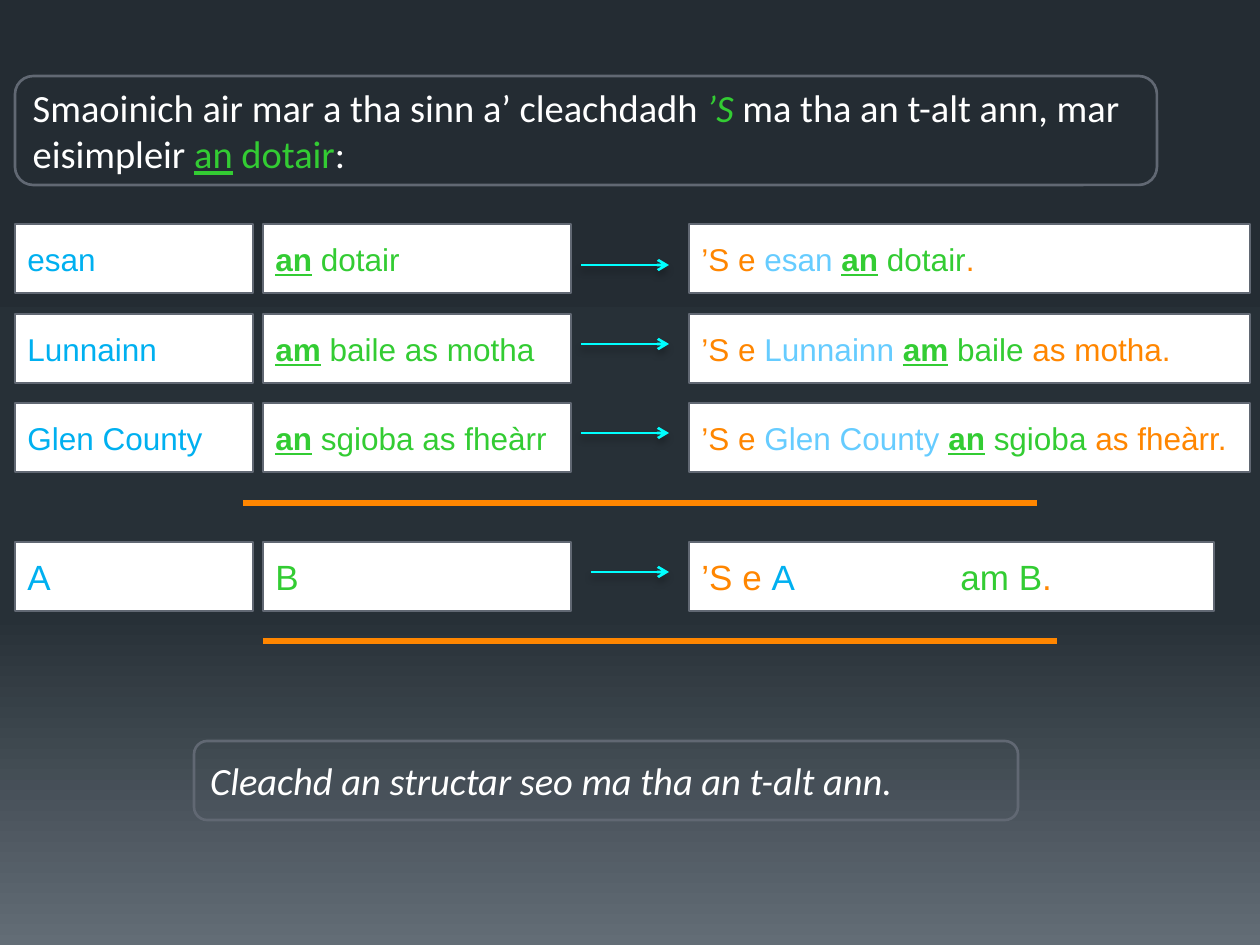
from copy import deepcopy
from dataclasses import dataclass
from typing import NamedTuple

from pptx import Presentation
from pptx.dml.color import RGBColor
from pptx.enum.shapes import MSO_CONNECTOR, MSO_SHAPE
from pptx.enum.text import MSO_ANCHOR, PP_ALIGN
from pptx.oxml import parse_xml
from pptx.oxml.ns import nsdecls, qn
from pptx.util import Emu, Pt

SCALE = 914400 / 126
WHITE = RGBColor(0xFF, 0xFF, 0xFF)
BORDER = RGBColor(0x61, 0x68, 0x73)
GREEN = RGBColor(0x33, 0xCC, 0x33)
ORANGE = RGBColor(0xFF, 0x86, 0x00)
BLUE = RGBColor(0x00, 0xB0, 0xF0)
SKY = RGBColor(0x66, 0xCC, 0xFF)
CYAN = RGBColor(0x00, 0xFF, 0xFF)
BACKDROP = [
    (0, RGBColor(0x24, 0x2C, 0x33)),
    (0.65, RGBColor(0x27, 0x30, 0x37)),
    (1, RGBColor(0x63, 0x6D, 0x76)),
]
CELL_H = 69


class Run(NamedTuple):
    text: str
    color: RGBColor
    bold: bool = False
    under: bool = False
    italic: bool = False


class Box(NamedTuple):
    left: int
    top: int
    width: int
    height: int


@dataclass
class Row:
    """One pattern: subject and noun, then the sentence they make."""
    top: int
    subject: list[Run]
    noun: list[Run]
    result: list[Run]
    arrow_y: int
    arrow_x: int = 581
    result_w: int = 561
    size: int = 18


def px(n: int) -> Emu:
    return Emu(round(n * SCALE))


def article(word: str) -> Run:
    return Run(word, GREEN, bold=True, under=True)


def write(shape, runs: list[Run], *, font: str = "Arial", size: int = 18,
          tab: int = 0) -> None:
    frame = shape.text_frame
    frame.word_wrap = True
    frame.vertical_anchor = MSO_ANCHOR.MIDDLE
    para = frame.paragraphs[0]
    para.alignment = PP_ALIGN.LEFT
    if tab:
        para._p.get_or_add_pPr().append(parse_xml(
            f'<a:tabLst {nsdecls("a")}><a:tab pos="{px(tab)}" algn="l"/></a:tabLst>'))
    for item in runs:
        run = para.add_run()
        run.text = item.text
        style = run.font
        style.name, style.size = font, Pt(size)
        style.bold, style.italic, style.underline = item.bold, item.italic, item.under
        style.color.rgb = item.color


def panel(slide, kind: MSO_SHAPE, box: Box, fill: RGBColor | None = None):
    shape = slide.shapes.add_shape(kind, *map(px, box))
    shape.shadow.inherit = False
    if fill is None:
        shape.fill.background()
    else:
        shape.fill.solid()
        shape.fill.fore_color.rgb = fill
    shape.line.color.rgb = BORDER
    shape.line.width = Pt(1.5)
    return shape


def rule(slide, start: int, end: int, y: int, color: RGBColor, width: float,
         arrow: bool = False) -> None:
    """Draw a level line; an arrow also gets a head and a soft shadow."""
    line = slide.shapes.add_connector(
        MSO_CONNECTOR.STRAIGHT, px(start), px(y), px(end), px(y))
    line.line.color.rgb = color
    line.line.width = Pt(width)
    shade = ""
    if arrow:
        line.line._get_or_add_ln().append(
            parse_xml(f'<a:tailEnd {nsdecls("a")} type="arrow"/>'))
        shade = (f'<a:outerShdw blurRad="{Pt(4)}" dist="{Pt(3)}" dir="5400000">'
                 '<a:srgbClr val="000000"><a:alpha val="28000"/></a:srgbClr>'
                 '</a:outerShdw>')
    line._element.spPr.append(
        parse_xml(f'<a:effectLst {nsdecls("a")}>{shade}</a:effectLst>'))


def draw_row(slide, row: Row) -> None:
    cells = [(15, 238, row.subject), (263, 308, row.noun),
             (689, row.result_w, row.result)]
    for left, width, runs in cells:
        box = Box(left, row.top, width, CELL_H)
        shape = panel(slide, MSO_SHAPE.FLOWCHART_PROCESS, box, WHITE)
        tab = 259 if any("\t" in run.text for run in runs) else 0
        write(shape, runs, size=row.size, tab=tab)
    rule(slide, row.arrow_x, 669, row.arrow_y, CYAN, 1.5, arrow=True)


def paint(slide) -> None:
    fill = slide.background.fill
    fill.gradient()
    fill.gradient_angle = 270
    stops = slide.element.find(".//" + qn("a:gsLst"))
    stops.append(deepcopy(stops[-1]))
    for stop, (place, color) in zip(fill.gradient_stops, BACKDROP):
        stop.position = place
        stop.color.rgb = color


ROWS = [
    Row(224, [Run("esan", BLUE)],
        [article("an"), Run(" dotair", GREEN)],
        [Run("’S e ", ORANGE), Run("esan ", SKY), article("an"),
         Run(" dotair", GREEN), Run(".", ORANGE)], 265),
    Row(314, [Run("Lunnainn", BLUE)],
        [article("am"), Run(" baile as motha", GREEN)],
        [Run("’S e ", ORANGE), Run("Lunnainn ", SKY), article("am"),
         Run(" baile ", GREEN), Run("as motha.", ORANGE)], 344),
    Row(403, [Run("Glen County", BLUE)],
        [article("an"), Run(" sgioba as fheàrr", GREEN)],
        [Run("’S e ", ORANGE), Run("Glen County ", SKY), article("an"),
         Run(" sgioba ", GREEN), Run("as fheàrr.", ORANGE)], 433),
    Row(542, [Run("A", BLUE)], [Run("B", GREEN)],
        [Run("’S e ", ORANGE), Run("A", BLUE), Run("\tam B", GREEN),
         Run(".", ORANGE)], 572, arrow_x=591, result_w=525, size=20),
]
NOTES = [
    (Box(15, 76, 1142, 109), [
        Run("Smaoinich air mar a tha sinn a’ cleachdadh ", WHITE),
        Run("’S ", GREEN, italic=True),
        Run("ma tha an t-alt ann, mar eisimpleir ", WHITE),
        Run("an", GREEN, under=True), Run(" dotair", GREEN), Run(":", WHITE)]),
    (Box(194, 741, 824, 79), [
        Run("Cleachd an structar seo ma tha an t-alt ann.", WHITE, italic=True)]),
]


def main() -> None:
    deck = Presentation()
    deck.slide_width, deck.slide_height = px(1260), px(945)
    slide = deck.slides.add_slide(deck.slide_layouts[6])
    paint(slide)
    for box, runs in NOTES:
        write(panel(slide, MSO_SHAPE.ROUNDED_RECTANGLE, box), runs,
              font="Calibri", size=22)
    for row in ROWS:
        draw_row(slide, row)
    for start, y in [(243, 503), (263, 641)]:
        rule(slide, start, start + 794, y, ORANGE, 3.75)
    deck.save("out.pptx")


if __name__ == "__main__":
    main()
